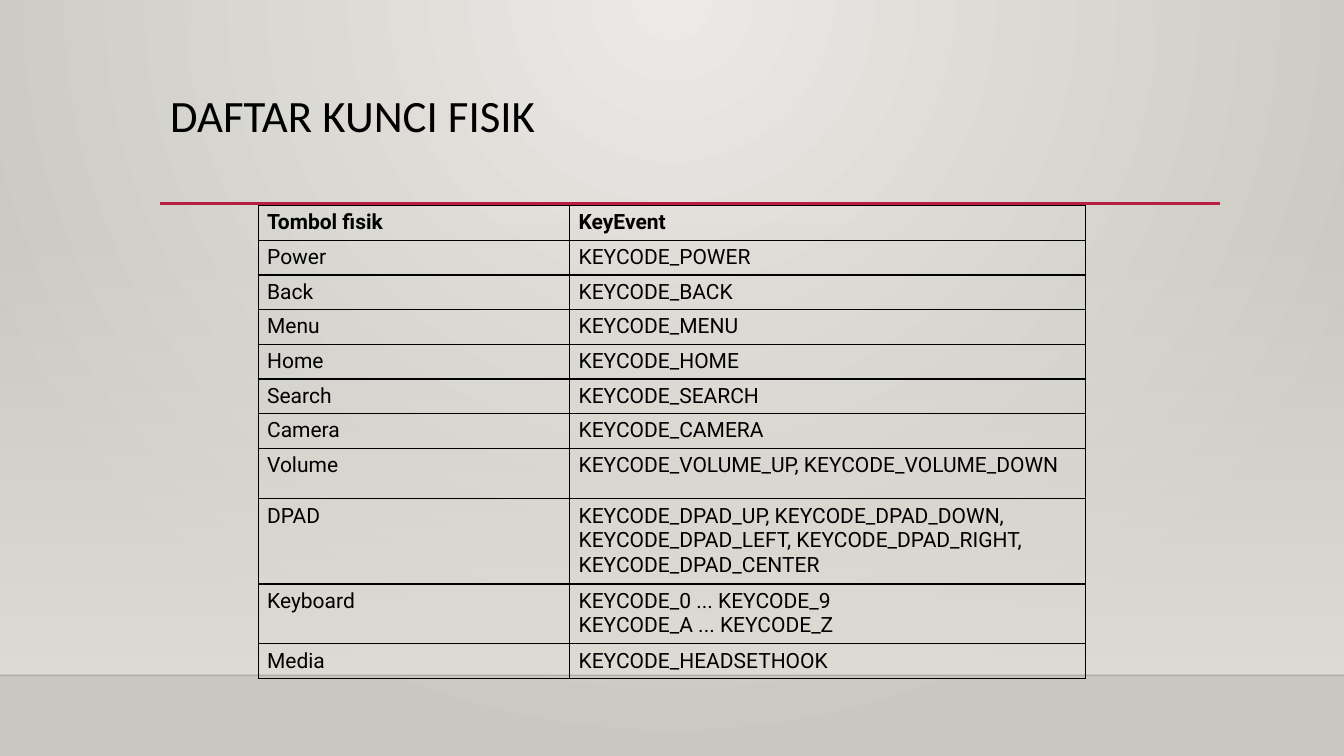
import pptx
import pptx.util
import pptx.dml.color
import pptx.enum.shapes
import pptx.oxml
import pptx.oxml.ns
from lxml import etree

RGBColor = pptx.dml.color.RGBColor
Inches = pptx.util.Inches
Pt = pptx.util.Pt
qn = pptx.oxml.ns.qn

TITLE = "DAFTAR KUNCI FISIK"
KEYS = [
    ("Tombol fisik", "KeyEvent"),
    ("Power", "KEYCODE_POWER"),
    ("Back", "KEYCODE_BACK"),
    ("Menu", "KEYCODE_MENU"),
    ("Home", "KEYCODE_HOME"),
    ("Search", "KEYCODE_SEARCH"),
    ("Camera", "KEYCODE_CAMERA"),
    ("Volume", "KEYCODE_VOLUME_UP, KEYCODE_VOLUME_DOWN"),
    ("DPAD", "KEYCODE_DPAD_UP, KEYCODE_DPAD_DOWN,\n"
             "KEYCODE_DPAD_LEFT, KEYCODE_DPAD_RIGHT,\n"
             "KEYCODE_DPAD_CENTER"),
    ("Keyboard", "KEYCODE_0 ... KEYCODE_9\nKEYCODE_A ... KEYCODE_Z"),
    ("Media", "KEYCODE_HEADSETHOOK"),
]
COLUMNS = (3.09, 5.12)
ROW = 0.33
TALL_ROWS = {"Volume": 0.5, "DPAD": 0.82, "Keyboard": 0.57}
WIDTH, HEIGHT = 13.33, 7.5
MARGIN, FLOOR, RULE = 1.59, 6.7, 2.02

BLACK = RGBColor(0x00, 0x00, 0x00)
NEAR_BLACK = RGBColor(0x00, 0x00, 0x01)
CRIMSON = RGBColor(0xB7, 0x1E, 0x42)
LIGHT = RGBColor(0xEC, 0xEA, 0xE7)
STONE = RGBColor(0xCA, 0xC7, 0xC1)
SAND = RGBColor(0xDF, 0xDB, 0xD5)


def write(frame, text, font="Roboto", size=15, bold=False, spacing=1.0):
    frame.word_wrap = True
    for index, line in enumerate(text.split("\n")):
        para = frame.add_paragraph() if index else frame.paragraphs[0]
        para.line_spacing = spacing
        span = para.add_run()
        span.text = line
        span.font.name = font
        span.font.size = Pt(size)
        span.font.bold = bold
        span.font.color.rgb = BLACK


def set_gradient(fill, start, end):
    fill.gradient()
    fill.gradient_angle = 270
    for stop, color, position in zip(fill.gradient_stops, (start, end), (0, 1)):
        stop.color.rgb = color
        stop.position = position


def set_alpha(color_element, percent):
    etree.SubElement(color_element, qn("a:alpha"), val=str(percent * 1000))


def add_rule(page, left, right, top, color, weight):
    rule = page.shapes.add_connector(
        pptx.enum.shapes.MSO_CONNECTOR.STRAIGHT,
        Inches(left), Inches(top), Inches(right), Inches(top))
    rule.line.color.rgb = color
    rule.line.width = Pt(weight)
    etree.SubElement(rule.element.spPr, qn("a:effectLst"))
    return rule


def set_borders(cell):
    properties = cell.fill._xPr
    for position, side in enumerate(("lnL", "lnR", "lnT", "lnB")):
        border = etree.Element(qn("a:" + side), w=str(Pt(1)))
        solid = etree.SubElement(border, qn("a:solidFill"))
        etree.SubElement(solid, qn("a:srgbClr"), val=str(BLACK))
        properties.insert(position, border)


def paint_background(page):
    set_gradient(page.background.fill, LIGHT, STONE)
    gradient = page.element.find(".//" + qn("a:gradFill"))
    gradient.remove(gradient.find(qn("a:lin")))
    circle = etree.Element(qn("a:path"))
    circle.set("path", "circle")
    etree.SubElement(circle, qn("a:fillToRect"),
                     l="43000", t="0", r="43000", b="100000")
    gradient.find(qn("a:gsLst")).addnext(circle)

    wall = page.shapes.add_shape(
        pptx.enum.shapes.MSO_SHAPE.RECTANGLE,
        0, Inches(2.21), Inches(WIDTH), Inches(FLOOR - 2.21))
    wall.shadow.inherit = False
    wall.line.fill.background()
    set_gradient(wall.fill, SAND, SAND)
    set_alpha(wall.element.spPr.find(".//" + qn("a:srgbClr")), 0)

    edge = add_rule(page, 0, WIDTH, FLOOR, NEAR_BLACK, 1)
    set_alpha(edge.element.spPr.find(".//" + qn("a:srgbClr")), 20)


def add_key_table(page):
    heights = [TALL_ROWS.get(name, ROW) for name, event in KEYS]
    frame = page.shapes.add_table(
        len(KEYS), len(COLUMNS), Inches(2.56), Inches(2.04),
        Inches(sum(COLUMNS)), Inches(sum(heights)))
    table = frame.table
    table.horz_banding = False
    for column, width in zip(table.columns, COLUMNS):
        column.width = Inches(width)
    for index, (row, texts) in enumerate(zip(table.rows, KEYS)):
        row.height = Inches(heights[index])
        for cell, text in zip(row.cells, texts):
            cell.margin_left = cell.margin_right = Inches(0.09)
            cell.margin_top = cell.margin_bottom = Pt(3.4)
            cell.fill.background()
            set_borders(cell)
            write(cell.text_frame, text, bold=index == 0)


def main():
    deck = pptx.Presentation()
    deck.slide_width, deck.slide_height = Inches(WIDTH), Inches(HEIGHT)
    page = deck.slides.add_slide(deck.slide_layouts[6])
    paint_background(page)
    add_rule(page, MARGIN, 12.1, RULE, CRIMSON, 2.5)
    box = page.shapes.add_textbox(
        Inches(MARGIN), Inches(0.88), Inches(10.5), Inches(1.15))
    write(box.text_frame, TITLE, font="Calibri", size=32, spacing=0.9)
    add_key_table(page)
    deck.save("out.pptx")


if __name__ == "__main__":
    main()
